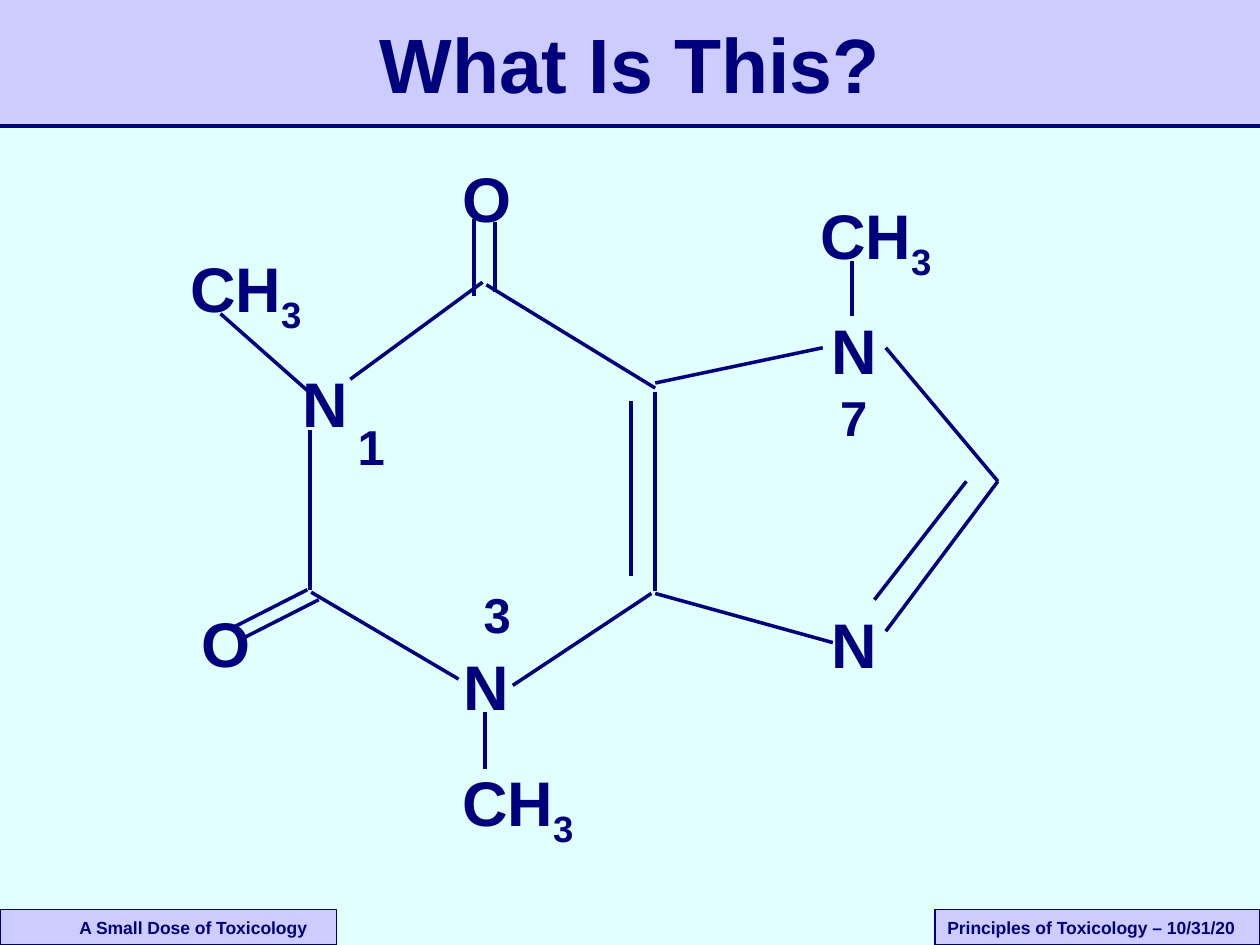
import pptx
import pptx.util
import pptx.dml.color
import pptx.enum.shapes
import pptx.enum.text
import pptx.oxml.ns
from lxml import etree

COLORS = {"ink": "00007D", "band": "CCCCFF", "background": "E1FFFF"}
RGB = {name: pptx.dml.color.RGBColor.from_string(code) for name, code in COLORS.items()}

deck = pptx.Presentation()
deck.slide_width = pptx.util.Inches(10)
deck.slide_height = pptx.util.Inches(7.5)
column = deck.slide_width // 1000  # the grid has 1000 columns and 750 rows
row = deck.slide_height // 750

page = deck.slides.add_slide(deck.slide_layouts[6])
page.background.fill.solid()
page.background.fill.fore_color.rgb = RGB["background"]


def draw_line(x1, y1, x2, y2):
    line = page.shapes.add_connector(
        pptx.enum.shapes.MSO_CONNECTOR.STRAIGHT,
        x1 * column, y1 * row, x2 * column, y2 * row)
    line.line.color.rgb = RGB["ink"]
    line.line.width = pptx.util.Pt(2)
    etree.SubElement(line._element.spPr, pptx.oxml.ns.qn("a:effectLst"))


def write(para, text, size):
    """Add one bold run and return it."""
    span = para.add_run()
    span.text = text
    span.font.name = "Arial"
    span.font.size = pptx.util.Pt(size)
    span.font.bold = True
    span.font.color.rgb = RGB["ink"]
    return span


# Header band and footer labels: left, top, width, height, text, left inset
bands = [
    (0, 0, 1000, 100, None, 10),
    (742, 722, 258, 28, "Principles of Toxicology – 10/31/20", 10),
    (0, 722, 267, 28, "A Small Dose of Toxicology", 63),
]
for left, top, width, height, text, inset in bands:
    band = page.shapes.add_shape(
        pptx.enum.shapes.MSO_SHAPE.RECTANGLE,
        left * column, top * row, width * column, height * row)
    band.shadow.inherit = False
    band.fill.solid()
    band.fill.fore_color.rgb = RGB["band"]
    if text is None:
        band.line.fill.background()
        continue
    band.line.color.rgb = RGB["ink"]
    band.line.width = pptx.util.Pt(0.75)
    frame = band.text_frame
    frame.word_wrap = False
    frame.margin_left = inset * column
    frame.vertical_anchor = pptx.enum.text.MSO_ANCHOR.MIDDLE
    para = frame.paragraphs[0]
    para.alignment = pptx.enum.text.PP_ALIGN.LEFT
    write(para, text, 10)
draw_line(0, 100, 1000, 100)

title = page.shapes.add_textbox(75 * column, 8 * row, 850 * column, 83 * row)
title.text_frame.word_wrap = True
title.text_frame.vertical_anchor = pptx.enum.text.MSO_ANCHOR.MIDDLE
para = title.text_frame.paragraphs[0]
para.alignment = pptx.enum.text.PP_ALIGN.CENTER
write(para, "What Is This?", 44)

bonds = [
    # six-membered ring
    (278, 301, 383, 224), (386, 226, 520, 308), (520, 311, 520, 469),
    (501, 318, 501, 457), (407, 544, 517, 471), (247, 470, 364, 539),
    (246, 341, 246, 468),
    # five-membered ring
    (653, 276, 520, 304), (703, 276, 792, 382), (703, 501, 792, 382),
    (694, 476, 767, 382), (661, 510, 520, 471),
    # methyl groups
    (676, 251, 676, 207), (385, 610, 385, 565), (244, 310, 175, 249),
    # double bonds to oxygen
    (244, 468, 183, 499), (253, 476, 192, 507),
    (393, 176, 393, 232), (376, 235, 376, 174),
]
for bond in bonds:
    draw_line(*bond)

# Label kind: width, height, text size
label_sizes = {
    "N": (56, 70, 36), "O": (59, 70, 36), "CH": (111, 70, 36),
    "1": (41, 56, 28), "3": (41, 56, 28), "7": (41, 56, 28),
}
labels = [
    ("N", 230, 284), ("N", 358, 509), ("N", 650, 476), ("N", 650, 242),
    ("CH", 641, 151), ("CH", 357, 601), ("CH", 141, 193),
    ("O", 150, 475), ("O", 357, 122),
    ("1", 274, 326), ("3", 374, 459), ("7", 657, 303),
]
for text, left, top in labels:
    width, height, size = label_sizes[text]
    box = page.shapes.add_textbox(left * column, top * row, width * column, height * row)
    box.text_frame.word_wrap = False
    para = box.text_frame.paragraphs[0]
    write(para, text, size)
    if text == "CH":
        subscript = write(para, "3", size)
        subscript._r.get_or_add_rPr().set("baseline", "-25000")

deck.save("out.pptx")
